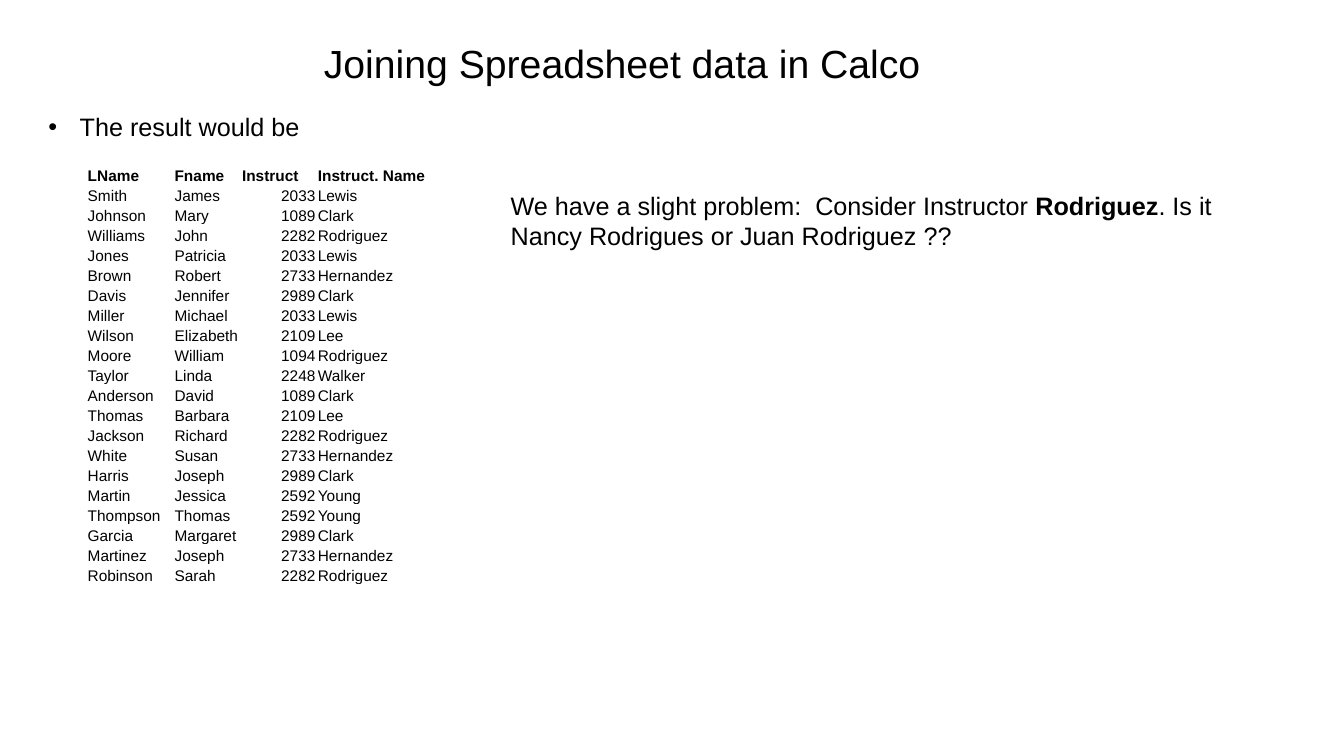
"""Build the slide on joining spreadsheet data."""
from pptx import Presentation
from pptx.dml.color import RGBColor
from pptx.enum.text import MSO_ANCHOR as ANCHOR, PP_ALIGN as ALIGN
from pptx.oxml.ns import qn
from pptx.util import Cm, Pt
from lxml.etree import SubElement

FONT = "Arial"
BLACK = RGBColor(0, 0, 0)

TITLE = "Joining Spreadsheet data in Calco"
RESULT = "The result would be"
PROBLEM = [
    ("We have a slight problem:  Consider Instructor ", False),
    ("Rodriguez", True),
    (". Is it Nancy Rodrigues or Juan Rodriguez ??", False),
]
HEADER = ("LName", "Fname", "Instruct", "Instruct. Name")
STUDENTS = [
    ("Smith", "James", "2033", "Lewis"),
    ("Johnson", "Mary", "1089", "Clark"),
    ("Williams", "John", "2282", "Rodriguez"),
    ("Jones", "Patricia", "2033", "Lewis"),
    ("Brown", "Robert", "2733", "Hernandez"),
    ("Davis", "Jennifer", "2989", "Clark"),
    ("Miller", "Michael", "2033", "Lewis"),
    ("Wilson", "Elizabeth", "2109", "Lee"),
    ("Moore", "William", "1094", "Rodriguez"),
    ("Taylor", "Linda", "2248", "Walker"),
    ("Anderson", "David", "1089", "Clark"),
    ("Thomas", "Barbara", "2109", "Lee"),
    ("Jackson", "Richard", "2282", "Rodriguez"),
    ("White", "Susan", "2733", "Hernandez"),
    ("Harris", "Joseph", "2989", "Clark"),
    ("Martin", "Jessica", "2592", "Young"),
    ("Thompson", "Thomas", "2592", "Young"),
    ("Garcia", "Margaret", "2989", "Clark"),
    ("Martinez", "Joseph", "2733", "Hernandez"),
    ("Robinson", "Sarah", "2282", "Rodriguez"),
]
COL_WIDTHS = (2.19, 1.7, 1.91, 3.55)
TABLE_HEIGHT = 10.59


def add_runs(p, runs, size):
    for text, bold in runs:
        r = p.add_run()
        r.text = text
        r.font.name = FONT
        r.font.size = Pt(size)
        r.font.bold = bold
        r.font.color.rgb = BLACK


def add_text(slide, box, runs, size):
    tf = slide.shapes.add_textbox(*map(Cm, box)).text_frame
    tf.word_wrap = True
    p = tf.paragraphs[0]
    add_runs(p, runs, size)
    return p


def add_bullet(p, indent):
    pPr = p._p.get_or_add_pPr()
    pPr.set("marL", str(indent))
    pPr.set("indent", str(-indent))
    SubElement(pPr, qn("a:buFont"), typeface=FONT)
    SubElement(pPr, qn("a:buChar"), char="•")


def add_students(slide):
    rows = [HEADER] + STUDENTS
    frame = slide.shapes.add_table(
        len(rows), len(HEADER), Cm(2.18), Cm(4.14),
        Cm(sum(COL_WIDTHS)), Cm(TABLE_HEIGHT))
    table = frame.table
    table.first_row = table.horz_banding = False
    for column, width in zip(table.columns, COL_WIDTHS):
        column.width = Cm(width)
    for i, values in enumerate(rows):
        for j, value in enumerate(values):
            cell = table.cell(i, j)
            cell.fill.background()
            cell.vertical_anchor = ANCHOR.BOTTOM
            cell.margin_left = cell.margin_right = cell.margin_top = Cm(0.03)
            cell.margin_bottom = 0
            p = cell.text_frame.paragraphs[0]
            p.alignment = ALIGN.RIGHT if value.isdigit() else ALIGN.LEFT
            add_runs(p, [(value, i == 0)], 11)


def main():
    prs = Presentation()
    prs.slide_width, prs.slide_height = Cm(33.87), Cm(19.05)
    slide = prs.slides.add_slide(prs.slide_layouts[6])
    title = add_text(slide, (1.78, 0.86, 27.79, 1.45), [(TITLE, False)], 28)
    title.alignment = ALIGN.CENTER
    result = add_text(slide, (0.97, 2.69, 30.5, 1.02), [(RESULT, False)], 18)
    add_bullet(result, Cm(0.79))
    add_students(slide)
    add_text(slide, (12.62, 4.67, 19.15, 1.8), PROBLEM, 18)
    prs.save("out.pptx")


if __name__ == "__main__":
    main()
